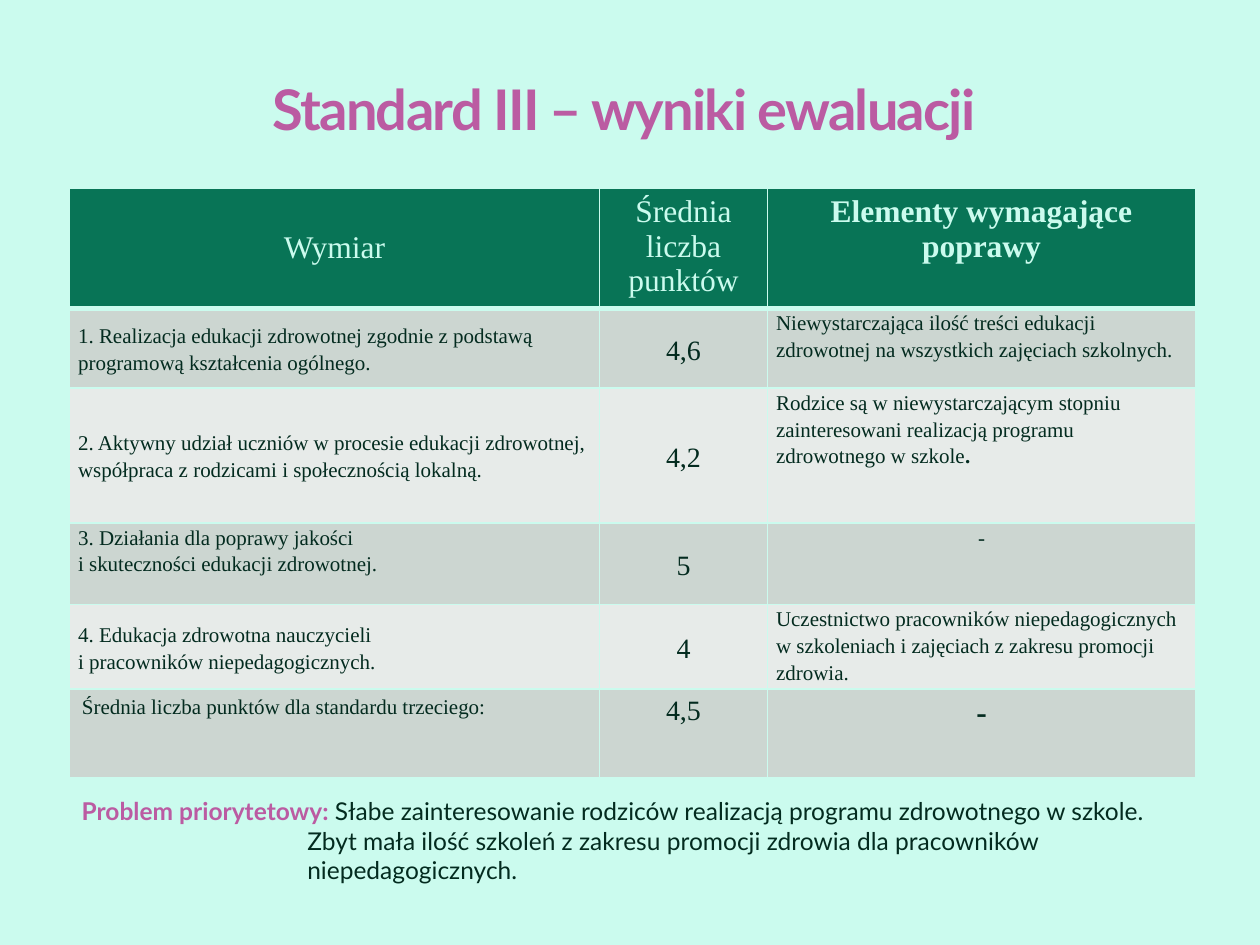
import pptx
import pptx.dml.color
import pptx.enum.text
import pptx.oxml
import pptx.oxml.ns
import pptx.util

RGBColor = pptx.dml.color.RGBColor
MINT = RGBColor(0xCB, 0xFB, 0xEE)
GREEN = RGBColor(0x08, 0x74, 0x56)
DARK = RGBColor(0x03, 0x2B, 0x1F)
PINK = RGBColor(0xBB, 0x5B, 0xA2)
GREY = RGBColor(0xCC, 0xD6, 0xD1)
PALE = RGBColor(0xE7, 0xEB, 0xE9)
SERIF, SANS = "Times New Roman", "Lato"
CENTER = pptx.enum.text.PP_ALIGN.CENTER
LEFT = pptx.enum.text.PP_ALIGN.LEFT
TOP = pptx.enum.text.MSO_ANCHOR.TOP
MIDDLE = pptx.enum.text.MSO_ANCHOR.MIDDLE
Inches, Pt = pptx.util.Inches, pptx.util.Pt


def write(paragraph, text, size, font, color, bold=False):
    for number, line in enumerate(text.split("\n")):
        if number:
            paragraph.add_line_break()
        run = paragraph.add_run()
        run.text = line
        run.font.size = Pt(size)
        run.font.name = font
        run.font.color.rgb = color
        run.font.bold = bold
    return run


def outline(cell, bottom):
    properties = cell._tc.get_or_add_tcPr()
    for side, width in (("L", 1), ("R", 1), ("T", 1), ("B", bottom)):
        properties.append(pptx.oxml.parse_xml(
            f'<a:ln{side} {pptx.oxml.ns.nsdecls("a")} w="{Pt(width)}"><a:solidFill>'
            f'<a:srgbClr val="{MINT}"/></a:solidFill></a:ln{side}>'))


deck = pptx.Presentation()
deck.slide_width, deck.slide_height = Inches(10), Inches(7.5)
slide = deck.slides.add_slide(deck.slide_layouts[5])
slide.background.fill.solid()
slide.background.fill.fore_color.rgb = MINT

title = slide.shapes.title
title.left, title.top = Inches(0.5), Inches(0.47)
title.width, title.height = Inches(9), Inches(0.78)
title.text_frame.vertical_anchor = MIDDLE
heading = title.text_frame.paragraphs[0]
heading.alignment = CENTER
heading_run = write(heading, "Standard III – wyniki ewaluacji ", 32, SANS, PINK, True)
heading_run.font._element.set("spc", "-100")

headers = ["Wymiar", "Średnia liczba punktów", "Elementy wymagające poprawy"]
results = [
    ("1. Realizacja edukacji zdrowotnej zgodnie z podstawą programową kształcenia ogólnego.", "4,6",
     "Niewystarczająca ilość treści edukacji zdrowotnej na wszystkich zajęciach szkolnych."),
    ("2. Aktywny udział uczniów w procesie edukacji zdrowotnej, współpraca z rodzicami "
     "i społecznością lokalną.", "4,2",
     "Rodzice są w niewystarczającym stopniu zainteresowani realizacją programu zdrowotnego w szkole."),
    ("3. Działania dla poprawy jakości \ni skuteczności edukacji zdrowotnej.", "5", "-"),
    ("4. Edukacja zdrowotna nauczycieli \ni pracowników niepedagogicznych.", "4",
     "Uczestnictwo pracowników niepedagogicznych w szkoleniach i zajęciach z zakresu promocji zdrowia."),
    ("Średnia liczba punktów dla standardu trzeciego:", "4,5", "-"),
]
column_widths = [4.21, 1.33, 3.4]
row_heights = [0.96, 0.63, 1.07, 0.65, 0.67, 0.7]
evaluation = slide.shapes.add_table(
    len(row_heights), len(column_widths), Inches(0.55), Inches(1.49),
    Inches(sum(column_widths)), Inches(sum(row_heights))).table
for column, width in zip(evaluation.columns, column_widths):
    column.width = Inches(width)
for row, height in zip(evaluation.rows, row_heights):
    row.height = Inches(height)

for column, header in enumerate(headers):
    cell = evaluation.cell(0, column)
    outline(cell, 3)
    cell.fill.solid()
    cell.fill.fore_color.rgb = GREEN
    cell.vertical_anchor = MIDDLE if column == 0 else TOP
    label = cell.text_frame.paragraphs[0]
    label.alignment = CENTER
    write(label, header, 18, SERIF, MINT, column == 2)

for row, result in enumerate(results, 1):
    summary = row == len(results)
    for column, text in enumerate(result):
        cell = evaluation.cell(row, column)
        outline(cell, 1)
        cell.fill.solid()
        cell.fill.fore_color.rgb = GREY if row % 2 else PALE
        entry = cell.text_frame.paragraphs[0]
        entry.alignment = CENTER if column == 1 or text == "-" else LEFT
        top_aligned = summary or column == 2 or (row, column) == (3, 0)
        cell.vertical_anchor = TOP if top_aligned else MIDDLE
        if not summary:
            cell.margin_left = cell.margin_right = Inches(0.07)
            cell.margin_top = cell.margin_bottom = 0
            entry.line_spacing = 1.15
            entry.space_after = Pt(10)
        size = 16 if column == 1 else 18 if summary and column == 2 else 12
        if (row, column) == (2, 2):
            write(entry, text[:-1], size, SERIF, DARK)
            write(entry, text[-1], size, SERIF, DARK, True)
        else:
            write(entry, text, size, SERIF, DARK, summary and column == 2)

priority = slide.shapes.add_textbox(Inches(0.55), Inches(6.27), Inches(8.98), Inches(0.85)).text_frame
priority.word_wrap = True
problem = priority.paragraphs[0]
write(problem, "Problem priorytetowy: ", 14, SANS, PINK, True)
write(problem, "Słabe zainteresowanie rodziców realizacją programu zdrowotnego w szkole.", 14, SANS, DARK)
for line in ("Zbyt mała ilość szkoleń z zakresu promocji zdrowia dla pracowników", "niepedagogicznych."):
    continuation = priority.add_paragraph()
    continuation._p.get_or_add_pPr().set("marL", str(Inches(1.79)))
    write(continuation, line, 14, SANS, DARK)

deck.save("out.pptx")
